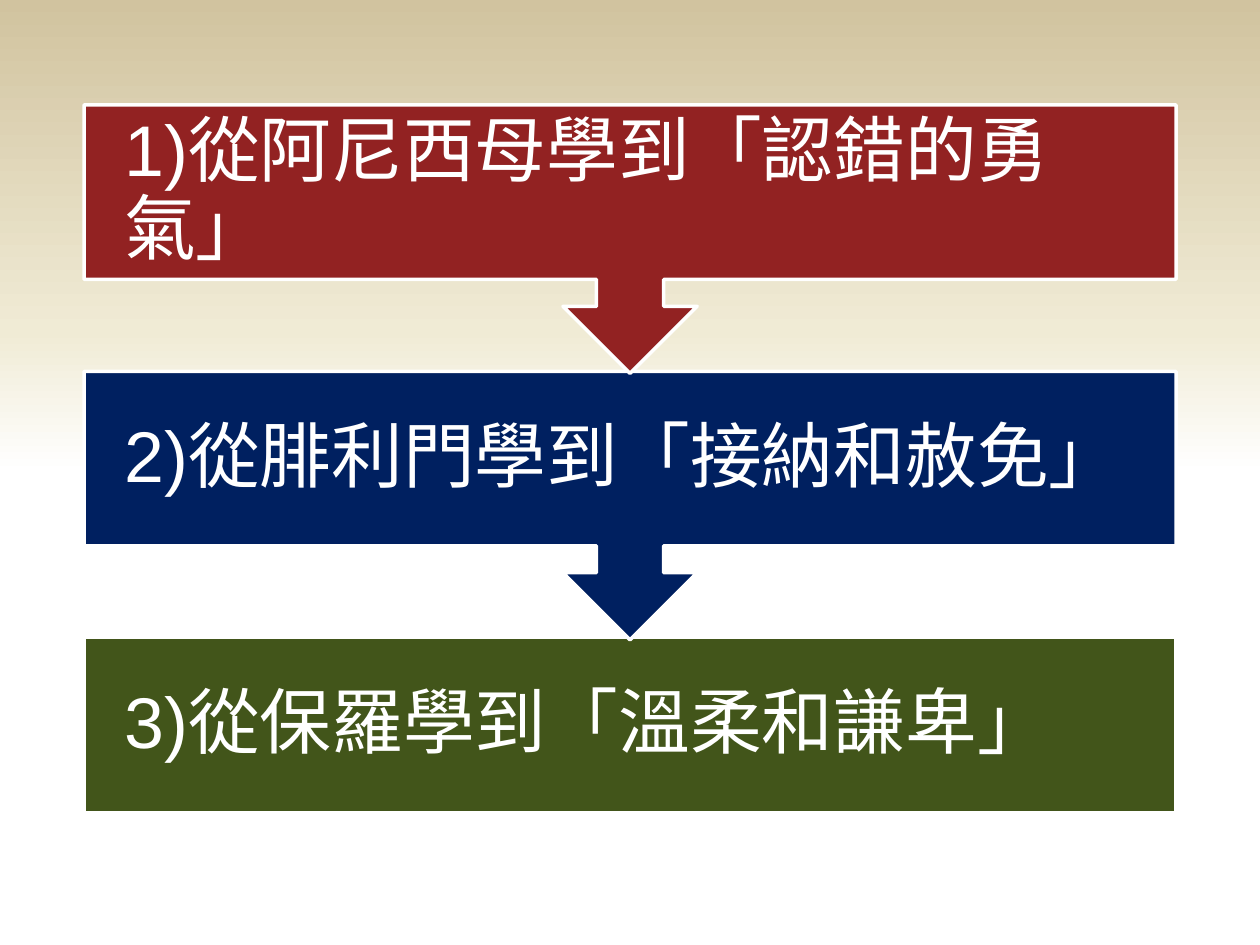
from copy import deepcopy
from dataclasses import dataclass

from pptx import Presentation
from pptx.dml.color import RGBColor
from pptx.enum import shapes, text
from pptx.oxml.ns import qn
from pptx.util import Pt


@dataclass(frozen=True)
class Theme:
    white: str = "FFFFFF"
    red: str = "922222"
    navy: str = "002060"
    green: str = "42551A"
    backdrop: tuple = ((0.5, "FFFFFF"), (0.65, "F0EBD5"), (1, "D1C39F"))
    font: str = "Arial"
    size: float = 41
    line: float = 2


@dataclass(frozen=True)
class Box:
    left: float
    top: float
    width: float
    height: float

    def points(self):
        return [Pt(value) for value in (self.left, self.top, self.width, self.height)]


THEME = Theme()
LESSONS = (
    ("1)從阿尼西母學到「認錯的勇氣」", THEME.red),
    ("2)從腓利門學到「接納和赦免」", THEME.navy),
    ("3)從保羅學到「溫柔和謙卑」", THEME.green),
)
BODY_HEIGHT = 100
CALLOUT_HEIGHT = 153.4
STEP_PITCH = 152.2


def apply_format(target, values):
    for name, value in values.items():
        setattr(target, name, value)


def paint_background(slide):
    fill = slide.background.fill
    fill.gradient()
    fill.gradient_angle = 90
    stop_list = next(slide.element.iter(qn("a:gsLst")))
    stop_list.append(deepcopy(stop_list[-1]))
    for stop, (position, color) in zip(fill.gradient_stops, THEME.backdrop):
        stop.position = position
        stop.color.rgb = RGBColor.from_string(color)


def add_panel(slide, box, color, preset, rotation):
    shape = slide.shapes.add_shape(preset, *box.points())
    shape.rotation = rotation
    shape.shadow.inherit = False
    shape.fill.solid()
    shape.fill.fore_color.rgb = RGBColor.from_string(color)
    shape.line.color.rgb = RGBColor.from_string(THEME.white)
    shape.line.width = Pt(THEME.line)


def add_label(slide, box, wording):
    frame = slide.shapes.add_textbox(*box.points()).text_frame
    apply_format(frame, {
        "word_wrap": True,
        "vertical_anchor": text.MSO_ANCHOR.MIDDLE,
        **{f"margin_{side}": Pt(23) for side in ("left", "top", "right", "bottom")},
    })
    paragraph = frame.paragraphs[0]
    apply_format(paragraph, {"line_spacing": 0.9, "space_after": Pt(0.35 * THEME.size)})
    run = paragraph.add_run()
    run.text = wording
    apply_format(run.font, {"name": THEME.font, "size": Pt(THEME.size)})
    run.font.color.rgb = RGBColor.from_string(THEME.white)


def add_lesson_flow(slide, box):
    last = len(LESSONS) - 1
    for index, (wording, color) in reversed(list(enumerate(LESSONS))):
        top = box.top + index * STEP_PITCH
        body = Box(box.left, top, box.width, BODY_HEIGHT)
        if index == last:
            add_panel(slide, body, color, shapes.MSO_SHAPE.RECTANGLE, 0)
        else:
            callout = Box(box.left, top, box.width, CALLOUT_HEIGHT)
            add_panel(slide, callout, color, shapes.MSO_SHAPE.UP_ARROW_CALLOUT, 180)
        add_label(slide, body, wording)


def main():
    presentation = Presentation()
    apply_format(presentation, {"slide_width": Pt(720), "slide_height": Pt(540)})
    slide = presentation.slides.add_slide(presentation.slide_layouts[6])
    paint_background(slide)
    add_lesson_flow(slide, Box(48, 60, 624, 404.4))
    presentation.save("out.pptx")


if __name__ == "__main__":
    main()
